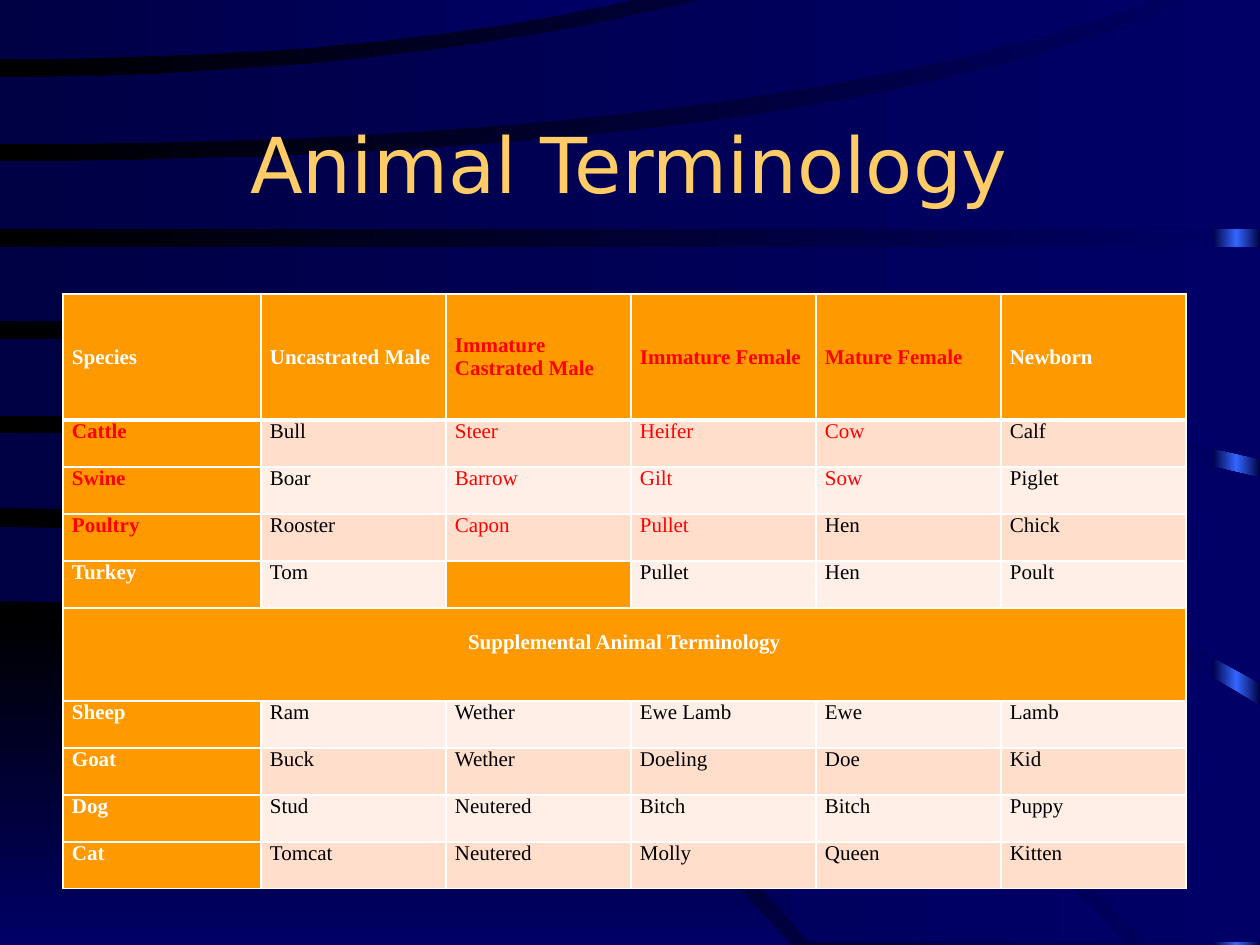
from copy import deepcopy

from lxml.etree import SubElement
from pptx import Presentation
from pptx.dml.color import RGBColor
from pptx.enum.shapes import MSO_SHAPE as Shape
from pptx.enum.text import MSO_ANCHOR as Anchor, PP_ALIGN as Align
from pptx.oxml.ns import qn
from pptx.util import Pt

PX = 7257  # EMU per px at 126 px to the inch
WIDTH, HEIGHT = 1260, 945
CURVE_STEPS = 24

BLACK = RGBColor(0x00, 0x00, 0x00)
WHITE = RGBColor(0xFF, 0xFF, 0xFF)
RED = RGBColor(0xFF, 0x00, 0x00)
NAVY = RGBColor(0x00, 0x00, 0x66)
DARK_NAVY = RGBColor(0x00, 0x00, 0x44)
BRIGHT_BLUE = RGBColor(0x33, 0x66, 0xFF)
GOLD = RGBColor(0xFF, 0xCC, 0x66)
ORANGE = RGBColor(0xFF, 0x99, 0x00)
PEACH = RGBColor(0xFF, 0xDE, 0xCC)
PALE_PEACH = RGBColor(0xFF, 0xEF, 0xE7)

# An edge leaves the left side level: start y, bend x, end x, end y
HILL_EDGE = (619, 510, 791, HEIGHT)
# Upper edge, lower edge and corners between them, from the lowest band up
BANDS = [
    ((527, 737, 1125, 942), (601, 530, 809, 942), []),
    ((433, 820, WIDTH, 706), (508, 740, 1145, 942), [(WIDTH, 942)]),
    ((339, 706, WIDTH, 478), (416, 792, WIDTH, 683), []),
    ((247, 630, WIDTH, 247), (321, 692, WIDTH, 459), []),
    ((161, 830, 1188, 0), (229, 630, WIDTH, 229), [(WIDTH, 0)]),
    ((77, 385, 701, 0), (144, 760, 1155, 0), []),
    ((0, 315, 631, 0), (59, 373, 631, 0), []),
]

SUPPLEMENT_ROW = 5
ANIMALS = [
    ["Species", "Uncastrated Male", "Immature Castrated Male",
     "Immature Female", "Mature Female", "Newborn"],
    ["Cattle", "Bull", "Steer", "Heifer", "Cow", "Calf"],
    ["Swine", "Boar", "Barrow", "Gilt", "Sow", "Piglet"],
    ["Poultry", "Rooster", "Capon", "Pullet", "Hen", "Chick"],
    ["Turkey", "Tom", "", "Pullet", "Hen", "Poult"],
    ["Supplemental Animal Terminology"],
    ["Sheep", "Ram", "Wether", "Ewe Lamb", "Ewe", "Lamb"],
    ["Goat", "Buck", "Wether", "Doeling", "Doe", "Kid"],
    ["Dog", "Stud", "Neutered", "Bitch", "Bitch", "Puppy"],
    ["Cat", "Tomcat", "Neutered", "Molly", "Queen", "Kitten"],
]
# Columns in red, by row
RED_COLUMNS = {0: (2, 3, 4), 1: (0, 2, 3, 4), 2: (0, 2, 3, 4), 3: (0, 2, 3)}
COLUMN_WIDTHS = [198] + [185] * 5
ROW_HEIGHTS = [126] + [47] * 4 + [93] + [47] * 4


def curve(start_y, bend_x, end_x, end_y):
    """Points of a quadratic curve that starts level at the left side."""
    points = []
    for step in range(CURVE_STEPS + 1):
        t = step / CURVE_STEPS
        x = 2 * t * (1 - t) * bend_x + t * t * end_x
        y = start_y + t * t * (end_y - start_y)
        points.append((round(x), round(y)))
    return points


def set_gradient(fill, colors, angle=0):
    """Spread the colours evenly; the angle runs counter-clockwise."""
    fill.gradient()
    fill.gradient_angle = angle
    stop_list = fill.gradient_stops[0]._gs.getparent()
    for _ in colors[2:]:
        stop_list.append(deepcopy(stop_list[-1]))
    for i, (stop, color) in enumerate(zip(fill.gradient_stops, colors)):
        stop.color.rgb = color
        stop.position = i / (len(colors) - 1)


def set_borders(cell, **widths):
    """Draw white borders; widths in points by side: L, R, T, B."""
    properties = cell._tc.get_or_add_tcPr()
    for side, width in widths.items():
        line = SubElement(properties, qn(f"a:ln{side}"), w=str(Pt(width)))
        solid = SubElement(line, qn("a:solidFill"))
        SubElement(solid, qn("a:srgbClr"), val=str(WHITE))


class SlideBuilder:
    title_font = "DejaVu Sans"
    table_font = "Times New Roman"

    def __init__(self, presentation):
        self.slide = presentation.slides.add_slide(presentation.slide_layouts[6])
        self.shapes = self.slide.shapes

    def background(self, colors):
        set_gradient(self.slide.background.fill, colors)

    def finish(self, shape, colors, angle=0):
        shape.shadow.inherit = False
        shape.line.fill.background()
        set_gradient(shape.fill, colors, angle)

    def strip(self, x, y, width, height, colors):
        box = [v * PX for v in (x, y, width, height)]
        self.finish(self.shapes.add_shape(Shape.RECTANGLE, *box), colors)

    def outline(self, points, colors, angle=0):
        builder = self.shapes.build_freeform(*points[0], scale=PX)
        builder.add_line_segments(points[1:])
        self.finish(builder.convert_to_shape(), colors, angle)

    def style(self, paragraph, font, size, color, bold=False):
        paragraph.font.name = font
        paragraph.font.size = Pt(size)
        paragraph.font.color.rgb = color
        paragraph.font.bold = bold

    def title(self, text, x, y, width, height):
        box = self.shapes.add_textbox(*[v * PX for v in (x, y, width, height)])
        frame = box.text_frame
        frame.word_wrap = True
        frame.vertical_anchor = Anchor.MIDDLE
        frame.text = text
        frame.paragraphs[0].alignment = Align.CENTER
        self.style(frame.paragraphs[0], self.title_font, 44, GOLD)

    def cell(self, cell, text, fill, color, bold):
        cell.margin_left = cell.margin_right = 9 * PX
        cell.margin_top = cell.margin_bottom = 0
        cell.text = text
        self.style(cell.text_frame.paragraphs[0], self.table_font, 12, color, bold)
        cell.fill.solid()
        cell.fill.fore_color.rgb = fill

    def table(self, x, y):
        size = [sum(COLUMN_WIDTHS) * PX, sum(ROW_HEIGHTS) * PX]
        table = self.shapes.add_table(len(ANIMALS), len(COLUMN_WIDTHS),
                                      x * PX, y * PX, *size).table
        table.first_row = table.horz_banding = False
        for column, width in zip(table.columns, COLUMN_WIDTHS):
            column.width = width * PX
        for row, height in zip(table.rows, ROW_HEIGHTS):
            row.height = height * PX
        for r in range(len(ANIMALS)):
            for c in range(len(COLUMN_WIDTHS)):
                set_borders(table.cell(r, c), L=1, R=1, T=3 if r == 1 else 1,
                            B=3 if r == 0 else 1)

        for r, row in enumerate(ANIMALS):
            for c, text in enumerate(row):
                heading = r == 0 or c == 0
                band = PEACH if r % 2 else PALE_PEACH
                fill = ORANGE if heading or not text else band
                color = WHITE if heading else BLACK
                if c in RED_COLUMNS.get(r, ()):
                    color = RED
                self.cell(table.cell(r, c), text, fill, color, heading)
                if r == 0:
                    table.cell(r, c).vertical_anchor = Anchor.MIDDLE

        supplement = table.cell(SUPPLEMENT_ROW, 0)
        supplement.merge(table.cell(SUPPLEMENT_ROW, len(COLUMN_WIDTHS) - 1))
        supplement.margin_top = 23 * PX
        supplement.text_frame.paragraphs[0].alignment = Align.CENTER


def main():
    presentation = Presentation()
    presentation.slide_width = WIDTH * PX
    presentation.slide_height = HEIGHT * PX
    builder = SlideBuilder(presentation)
    builder.background([BLACK, NAVY])
    builder.strip(1213, 0, 47, HEIGHT, [DARK_NAVY, BRIGHT_BLUE, DARK_NAVY])
    builder.outline(curve(*HILL_EDGE) + [(0, HEIGHT)], [BLACK, NAVY], angle=270)
    for upper, lower, corners in BANDS:
        builder.outline(curve(*upper) + corners + curve(*lower)[::-1],
                        [DARK_NAVY, NAVY])
    builder.title("Animal Terminology", 94, 84, 1071, 158)
    builder.table(63, 294)
    presentation.save("out.pptx")


if __name__ == "__main__":
    main()
